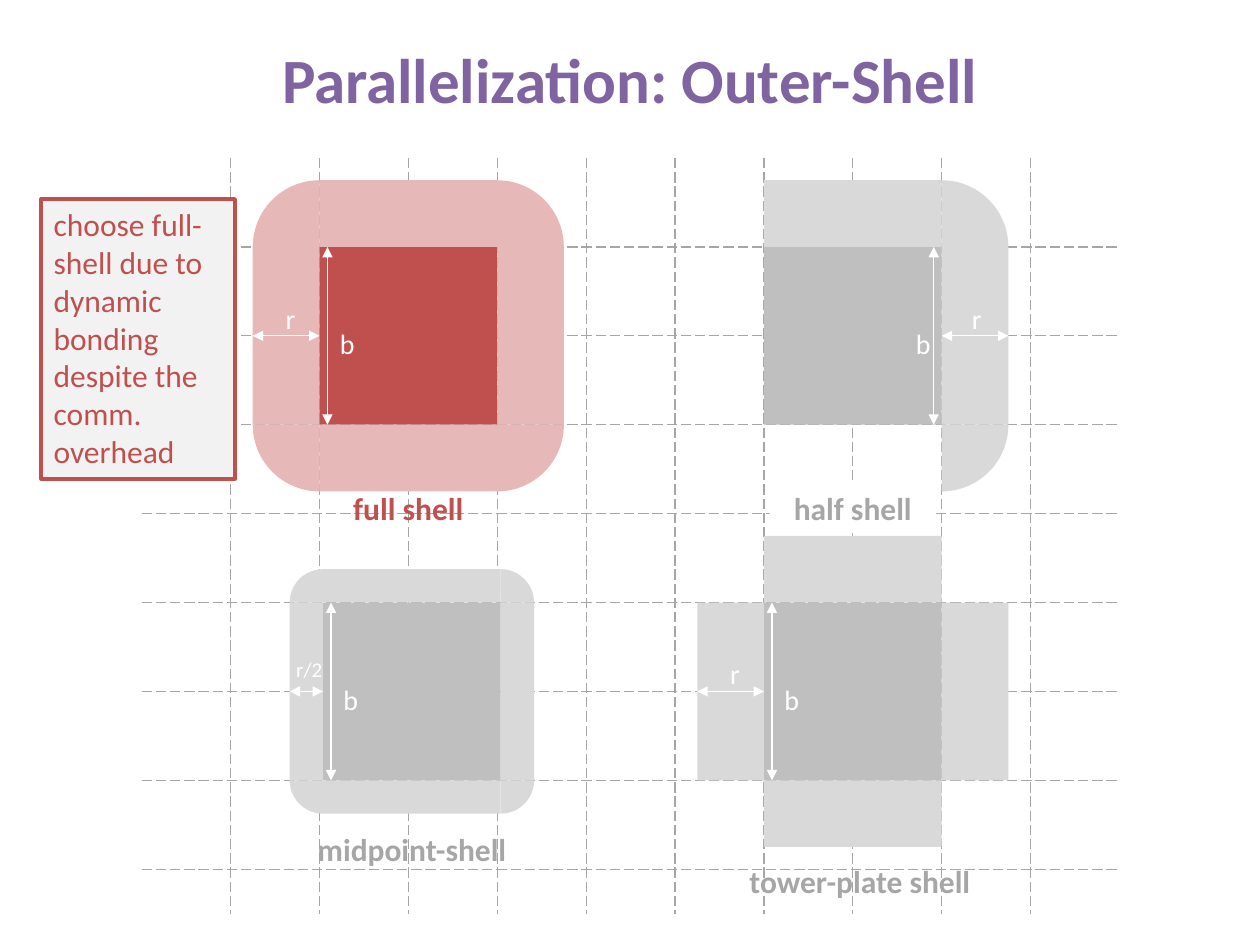
from dataclasses import dataclass

from lxml import etree
from pptx import Presentation
from pptx.dml.color import RGBColor
from pptx.enum.dml import MSO_LINE
from pptx.enum.shapes import MSO_CONNECTOR, MSO_SHAPE
from pptx.enum.text import MSO_ANCHOR, PP_ALIGN
from pptx.oxml.ns import qn
from pptx.util import Inches, Pt

RECTANGLE, PIE = MSO_SHAPE.RECTANGLE, MSO_SHAPE.PIE
STRAIGHT = MSO_CONNECTOR.STRAIGHT
LONG_DASH = MSO_LINE.LONG_DASH
LEFT, CENTER = PP_ALIGN.LEFT, PP_ALIGN.CENTER
TOP, MIDDLE = MSO_ANCHOR.TOP, MSO_ANCHOR.MIDDLE

FONT = "Calibri"
COLORS = {
    "title": "8064A2", "grid": "A6A6A6", "white": "FFFFFF", "note": "F2F2F2",
    "red": "C0504D", "pink": "E6B9B8", "gray": "BFBFBF", "light": "D9D9D9",
}

# The grid: column 0 and row 0 are the first dashed lines.
GRID_LEFT, GRID_TOP = 1.83, 1.96
CELL = 6.35 / 9
COLUMNS, ROWS = 10, 8
SIDE = 2  # cells along each core square
LABEL_HEIGHT = 0.57
QUARTER_TURN = 54  # pie adjustment for 90 degrees


@dataclass
class Shell:
    """A core square with its shell; lengths are in grid cells."""
    name: str
    column: float
    row: float
    reach: float
    bands: tuple[str, ...]
    corners: tuple[int, ...]  # quarters clockwise from bottom right
    core: str
    band: str
    name_color: str
    name_width: float
    name_top: float
    name_shift: float = 0
    name_fill: str | None = None
    radius_text: str = "r"
    radius_size: int = 16
    radius_left: float = -0.52
    radius_side: str = "left"
    side_arrow: float = 0.09
    side_text: float = 0.09


SHELLS = [
    Shell("full shell", 1, 0, 0.75, ("left", "right", "top", "bottom"), (0, 1, 2, 3),
          "red", "pink", "red", 2.18, 2.65),
    Shell("half shell", 6, 0, 0.75, ("right", "top"), (0, 3),
          "gray", "light", "grid", 1.87, 2.65, name_fill="white",
          radius_left=2.2, radius_side="right", side_arrow=1.91, side_text=1.57),
    Shell("midpoint-shell", 1.04, 4, 0.375, ("left", "right", "top", "bottom"), (0, 1, 2, 3),
          "gray", "light", "grid", 2.89, 2.49,
          radius_text="r/2", radius_size=12, radius_left=-0.44),
    Shell("tower-plate shell", 6, 4, 0.75, ("left", "right", "top", "bottom"), (),
          "gray", "light", "grid", 3.3, 2.85, name_shift=0.08),
]


def color(name: str) -> RGBColor:
    return RGBColor.from_string(COLORS[name])


def x_at(column: float) -> int:
    return Inches(GRID_LEFT + column * CELL)


def y_at(row: float) -> int:
    return Inches(GRID_TOP + row * CELL)


def cells(count: float) -> int:
    return Inches(count * CELL)


def add_filled(slide, kind, column: float, row: float, width: float, height: float, fill: str):
    shape = slide.shapes.add_shape(kind, x_at(column), y_at(row), cells(width), cells(height))
    shape.shadow.inherit = False
    shape.fill.solid()
    shape.fill.fore_color.rgb = color(fill)
    shape.line.fill.background()
    return shape


def write(shape, text: str, size: int, text_color: str, bold: bool = False,
          align=LEFT, anchor=TOP) -> None:
    frame = shape.text_frame
    frame.word_wrap = True
    frame.vertical_anchor = anchor
    paragraph = frame.paragraphs[0]
    paragraph.alignment = align
    run = paragraph.add_run()
    run.text = text
    run.font.name = FONT
    run.font.size = Pt(size)
    run.font.bold = bold
    run.font.color.rgb = color(text_color)


def add_text_box(slide, column: float, row: float, width: float, height: float):
    return slide.shapes.add_textbox(x_at(column), y_at(row), cells(width), cells(height))


def add_line(slide, start: tuple[float, float], end: tuple[float, float],
             line_color: str, dashed: bool = False, arrows: bool = False):
    connector = slide.shapes.add_connector(
        STRAIGHT, x_at(start[0]), y_at(start[1]), x_at(end[0]), y_at(end[1]))
    connector.line.width = Pt(0.75)
    connector.line.color.rgb = color(line_color)
    if dashed:
        connector.line.dash_style = LONG_DASH
    properties = connector._element.spPr
    if arrows:
        line = properties.find(qn("a:ln"))
        for tag in ("a:headEnd", "a:tailEnd"):
            etree.SubElement(line, qn(tag), type="triangle")
    etree.SubElement(properties, qn("a:effectLst"))
    return connector


def add_grid(slide) -> None:
    for column in range(COLUMNS):
        add_line(slide, (column, -1), (column, 7.5), "grid", dashed=True)
    for row in range(ROWS):
        add_line(slide, (-1, row), (10, row), "grid", dashed=True)


def add_shell(slide, shell: Shell) -> None:
    column, row, reach = shell.column, shell.row, shell.reach
    right, bottom = column + SIDE, row + SIDE
    core = add_filled(slide, RECTANGLE, column, row, SIDE, SIDE, shell.core)

    places = {
        "left": (column - reach, row, reach, SIDE),
        "right": (right, row, reach, SIDE),
        "top": (column, row - reach, SIDE, reach),
        "bottom": (column, bottom, SIDE, reach),
    }
    bands = {side: add_filled(slide, RECTANGLE, *places[side], shell.band)
             for side in shell.bands}

    centers = [(right, bottom), (column, bottom), (column, row), (right, row)]
    for quarter in shell.corners:
        x, y = centers[quarter]
        pie = add_filled(slide, PIE, x - reach, y - reach, 2 * reach, 2 * reach, shell.band)
        pie.adjustments[0] = quarter * QUARTER_TURN
        pie.adjustments[1] = (quarter + 1) % 4 * QUARTER_TURN

    arrow_column = column + shell.side_arrow
    add_line(slide, (arrow_column, row), (arrow_column, bottom), "white", arrows=True)
    write(add_text_box(slide, column + shell.side_text, row + 0.83, 0.4, 0.52), "b", 16, "white")

    outer = bands[shell.radius_side]
    first, last, site = (outer, core, 1) if shell.radius_side == "left" else (core, outer, 3)
    radius = add_line(slide, (column, row + 1), (right, row + 1), "white", arrows=True)
    radius.begin_connect(first, site)
    radius.end_connect(last, site)
    write(add_text_box(slide, column + shell.radius_left, row + 0.54, 0.7, 0.52),
          shell.radius_text, shell.radius_size, "white")


def add_name(slide, shell: Shell) -> None:
    left = shell.column + SIDE / 2 + shell.name_shift - shell.name_width / 2
    place = (left, shell.row + shell.name_top, shell.name_width, LABEL_HEIGHT)
    if shell.name_fill:
        label = add_filled(slide, RECTANGLE, *place, shell.name_fill)
    else:
        label = add_text_box(slide, *place)
    write(label, shell.name, 18, shell.name_color, bold=True, align=CENTER)


def main() -> None:
    presentation = Presentation()
    presentation.slide_width, presentation.slide_height = Inches(10), Inches(7.5)
    slide = presentation.slides.add_slide(presentation.slide_layouts[5])

    title = slide.shapes.title
    title.left, title.top = 0, 0
    title.width, title.height = presentation.slide_width, presentation.slide_height // 6
    write(title, "Parallelization: Outer-Shell", 36, "title", True, CENTER, MIDDLE)

    add_grid(slide)
    for shell in SHELLS:
        add_shell(slide, shell)
    for shell in SHELLS:
        add_name(slide, shell)

    note = add_filled(slide, RECTANGLE, -2.13, -0.54, 2.18, 3.15, "note")
    note.line.color.rgb = color("red")
    note.line.width = Pt(2)
    write(note, "choose full-shell due to dynamic bonding despite the comm. overhead", 18, "red")
    presentation.save("out.pptx")


if __name__ == "__main__":
    main()
